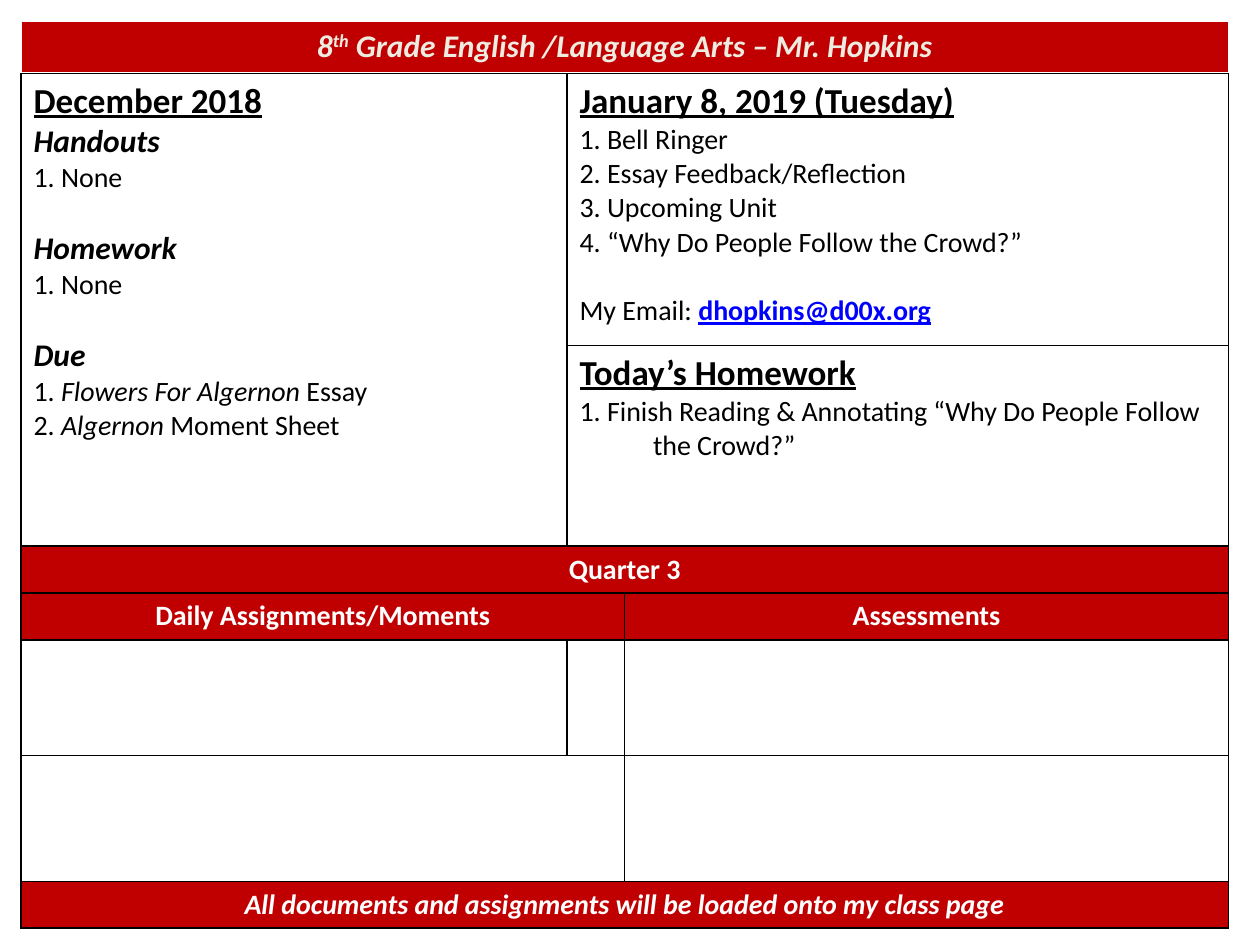
from dataclasses import dataclass, field
from typing import Optional

from lxml.etree import SubElement
from pptx import Presentation
from pptx.dml.color import RGBColor
from pptx.enum.text import PP_ALIGN
from pptx.oxml.ns import qn
from pptx.util import Pt


@dataclass(frozen=True)
class Theme:
    font: str = "Calibri"
    black: str = "000000"
    white: str = "FFFFFF"
    cream: str = "EEECE1"
    red: str = "C00000"
    link: str = "0000FF"
    heading: float = 20
    subheading: float = 18
    body: float = 16
    border: float = 1
    gap: float = 19.5  # one line of body text


THEME = Theme()


@dataclass(frozen=True)
class Span:
    text: str
    style: dict = field(default_factory=dict)


@dataclass(frozen=True)
class Line:
    spans: tuple[Span, ...]
    hanging: float = 0
    before: float = 0
    centred: bool = False


@dataclass(frozen=True)
class Grid:
    top: float
    columns: tuple[float, ...]
    rows: tuple[float, ...]
    border: bool = True


def add_text(paragraph, text: str, *, size: float = THEME.body,
             color: str = THEME.black, bold: bool = False, italic: bool = False,
             underline: bool = False, superscript: bool = False) -> None:
    run = paragraph.add_run()
    run.text = text
    font = run.font
    font.name, font.size = THEME.font, Pt(size)
    font.bold, font.italic, font.underline = bold, italic, underline
    font.color.rgb = RGBColor.from_string(color)
    if superscript:
        run._r.get_or_add_rPr().set("baseline", "30000")


def add_borders(cell) -> None:
    properties = cell._tc.get_or_add_tcPr()
    for position, side in enumerate(("lnL", "lnR", "lnT", "lnB")):
        edge = SubElement(properties, qn(f"a:{side}"), w=str(Pt(THEME.border)))
        fill = SubElement(edge, qn("a:solidFill"))
        SubElement(fill, qn("a:srgbClr"), val=THEME.black)
        properties.insert(position, edge)


def add_grid(slide, grid: Grid):
    table = slide.shapes.add_table(
        len(grid.rows), len(grid.columns), Pt(12), Pt(grid.top),
        Pt(sum(grid.columns)), Pt(sum(grid.rows))).table
    table.first_row = table.horz_banding = False
    for column, width in zip(table.columns, grid.columns):
        column.width = Pt(width)
    for row, height in zip(table.rows, grid.rows):
        row.height = Pt(height)
    for cell in table.iter_cells():
        cell.fill.background()
        if grid.border:
            add_borders(cell)
    return table


def fill_cell(cell, lines: list[Line], background: Optional[str] = None) -> None:
    if background:
        cell.fill.solid()
        cell.fill.fore_color.rgb = RGBColor.from_string(background)
    frame = cell.text_frame
    for number, line in enumerate(lines):
        paragraph = frame.add_paragraph() if number else frame.paragraphs[0]
        paragraph.space_before = Pt(line.before)
        if line.centred:
            paragraph.alignment = PP_ALIGN.CENTER
        if line.hanging:
            properties = paragraph._p.get_or_add_pPr()
            properties.set("marL", str(Pt(line.hanging)))
            properties.set("indent", str(Pt(-line.hanging)))
        for span in line.spans:
            add_text(paragraph, span.text, **span.style)


def heading(text: str, hanging: float = 0) -> Line:
    style = dict(size=THEME.heading, bold=True, underline=True)
    return Line((Span(text, style),), hanging)


def subheading(text: str, before: float = 0) -> Line:
    style = dict(size=THEME.subheading, bold=True, italic=True)
    return Line((Span(text, style),), before=before)


def item(*spans: Span, hanging: float = 42, before: float = 0) -> Line:
    return Line(spans, hanging, before)


def band(text: str, italic: bool = False) -> list[Line]:
    style = dict(color=THEME.white, bold=True, italic=italic)
    return [Line((Span(text, style),), centred=True)]


def add_agenda(slide) -> None:
    agenda = add_grid(slide, Grid(42, (312, 378), (155.5, 108.7)))
    month = agenda.cell(0, 0)
    month.merge(agenda.cell(1, 0))
    month.margin_bottom = Pt(3.6 + THEME.gap)
    title_style = dict(italic=True)
    fill_cell(month, [
        heading("December 2018"),
        subheading("Handouts"),
        item(Span("1. None"), hanging=27),
        subheading("Homework", THEME.gap),
        item(Span("1. None")),
        subheading("Due", THEME.gap),
        item(Span("1. "), Span("Flowers For Algernon ", title_style),
             Span("Essay"), hanging=27),
        item(Span("2. "), Span("Algernon", title_style),
             Span(" Moment Sheet"), hanging=27),
    ])
    activities = ("1. Bell Ringer", "2. Essay Feedback/Reflection",
                  "3. Upcoming Unit", "4. “Why Do People Follow the Crowd?”")
    email_style = dict(color=THEME.link, bold=True, underline=True)
    fill_cell(agenda.cell(0, 1), [
        heading("January 8, 2019 (Tuesday)", 42),
        *(item(Span(activity)) for activity in activities),
        item(Span("My Email: "), Span("dhopkins@d00x.org", email_style),
             before=THEME.gap),
    ])
    fill_cell(agenda.cell(1, 1), [
        heading("Today’s Homework", 42),
        item(Span("1. Finish Reading & Annotating “Why Do People Follow the Crowd?”")),
    ])


def add_class_title(slide) -> None:
    title = add_grid(slide, Grid(12, (690,), (29.5,), border=False))
    style = dict(size=THEME.subheading, color=THEME.cream, bold=True, italic=True)
    fill_cell(title.cell(0, 0), [Line((
        Span("8", style),
        Span("th", {**style, "superscript": True}),
        Span(" Grade English /Language Arts – Mr. Hopkins", style),
    ), centred=True)], THEME.red)


def add_quarter(slide) -> None:
    quarter = add_grid(slide, Grid(312, (345, 345), (26, 26, 138, 26)))
    for row in (0, 3):
        quarter.cell(row, 0).merge(quarter.cell(row, 1))
    bands = {
        (0, 0): band("Quarter 3"),
        (1, 0): band("Daily Assignments/Moments"),
        (1, 1): band("Assessments"),
        (3, 0): band("All documents and assignments will be loaded onto my class page",
                     italic=True),
    }
    for position, lines in bands.items():
        fill_cell(quarter.cell(*position), lines, THEME.red)


def main() -> None:
    deck = Presentation()
    deck.slide_width, deck.slide_height = Pt(720), Pt(540)
    slide = deck.slides.add_slide(deck.slide_layouts[6])
    # Agenda first: its lower edge runs behind the quarter table
    add_agenda(slide)
    add_class_title(slide)
    add_quarter(slide)
    deck.save("out.pptx")


if __name__ == "__main__":
    main()
